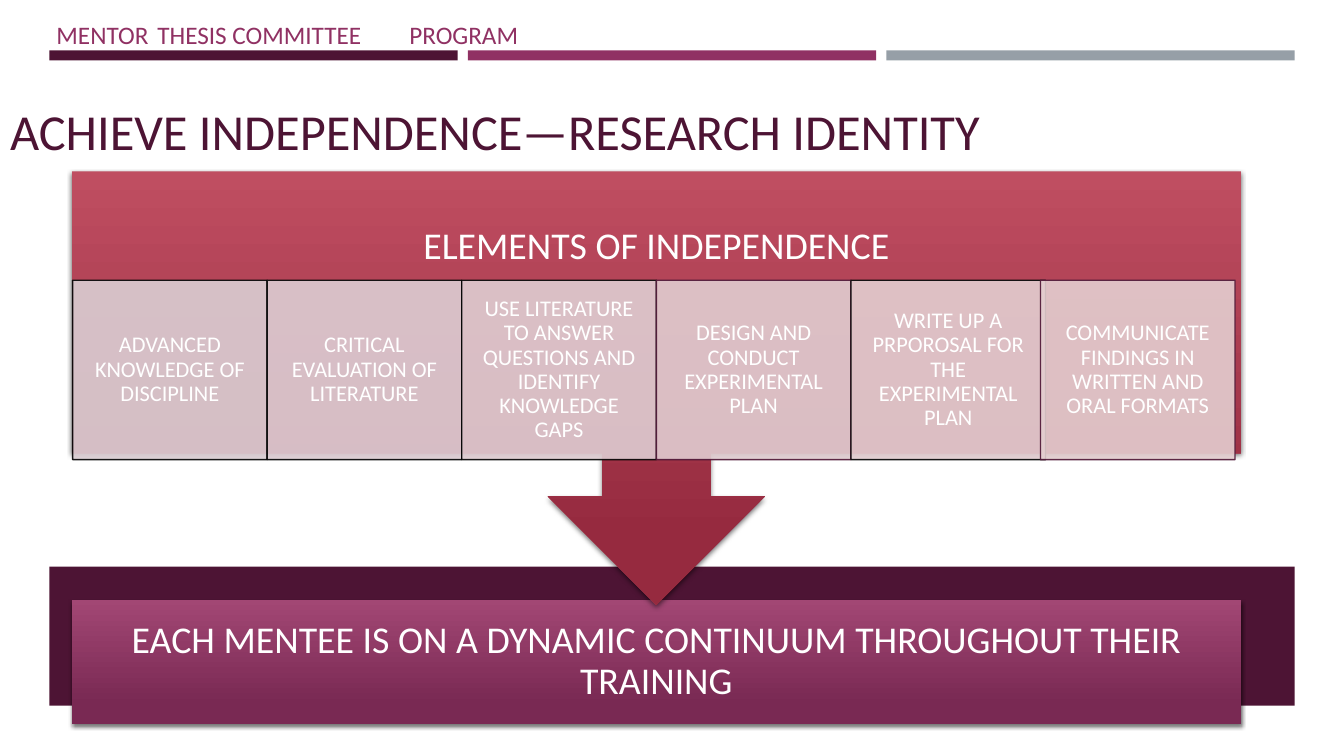
from lxml import etree
from pptx import Presentation
from pptx.dml.color import RGBColor
from pptx.enum.shapes import MSO_SHAPE
from pptx.enum.text import MSO_ANCHOR, MSO_AUTO_SIZE, PP_ALIGN
from pptx.oxml.ns import qn
from pptx.util import Pt

PX = 9144
RECT, CALLOUT = MSO_SHAPE.RECTANGLE, MSO_SHAPE.UP_ARROW_CALLOUT
MIDDLE, TOP = MSO_ANCHOR.MIDDLE, MSO_ANCHOR.TOP
CENTER, LEFT = PP_ALIGN.CENTER, PP_ALIGN.LEFT
NO_FIT = MSO_AUTO_SIZE.NONE
PLUM, MAGENTA, GREY = "4D1434", "903163", "969FA7"
WHITE, BLACK = "FFFFFF", "000000"
ELEMENTS = [
    ("ADVANCED KNOWLEDGE OF DISCIPLINE", "DBCED3", BLACK),
    ("CRITICAL EVALUATION OF LITERATURE", "DDCDD3", BLACK),
    ("USE LITERATURE TO ANSWER QUESTIONS AND IDENTIFY KNOWLEDGE GAPS", "DFCDD2", BLACK),
    ("DESIGN AND CONDUCT EXPERIMENTAL PLAN", "E1CDD1", PLUM),
    ("WRITE UP A PRPOROSAL FOR THE EXPERIMENTAL PLAN", "E3CED1", BLACK),
    ("COMMUNICATE FINDINGS IN WRITTEN AND ORAL FORMATS", "E4CED0", PLUM),
]


def emu(*px):
    """Turn px lengths into EMU."""
    return [int(v * PX) for v in px]


def rgb(hex_color):
    """Turn a hex string into a colour."""
    return RGBColor.from_string(hex_color)


def set_attrs(obj, formats):
    """Set each attribute of an object from a dict."""
    for name, value in formats.items():
        setattr(obj, name, value)


def set_alpha(fill_parent, percent):
    """Make the solid colours below an element partly opaque."""
    for clr in fill_parent.iter(qn("a:srgbClr")):
        etree.SubElement(clr, qn("a:alpha"), val=str(percent * 1000))


def write(sp, text, size, color, align=CENTER, anchor=MIDDLE, pad=(10, 5), spacing=1.0):
    """Put one formatted paragraph into a shape and return it."""
    tf = sp.text_frame
    dx, dy = emu(*pad)
    set_attrs(tf, {"word_wrap": True, "auto_size": NO_FIT, "vertical_anchor": anchor,
                   "margin_left": dx, "margin_right": dx,
                   "margin_top": dy, "margin_bottom": dy})
    p = tf.paragraphs[0]
    set_attrs(p, {"alignment": align, "line_spacing": spacing, "space_before": Pt(0)})
    r = p.add_run()
    r.text = text
    set_attrs(r.font, {"name": "Calibri", "size": Pt(size), "bold": False})
    r.font.color.rgb = rgb(color)
    return p


def add_block(s, box, fill, kind=RECT):
    """Add a plain filled shape without line or shadow."""
    sp = s.shapes.add_shape(kind, *emu(*box))
    sp.shadow.inherit = False
    sp.fill.solid()
    sp.fill.fore_color.rgb = rgb(fill)
    sp.line.fill.background()
    return sp


def add_glossy(s, box, light, dark, kind=RECT):
    """Add a shape with a vertical gradient and a soft shadow below."""
    sp = add_block(s, box, light, kind)
    sp.fill.gradient()
    sp.fill.gradient_angle = 270
    for stop, position, color in zip(sp.fill.gradient_stops, (0, 0.84), (light, dark)):
        stop.position = position
        stop.color.rgb = rgb(color)
    sp_pr = sp.element.spPr
    sp_pr.find(qn("a:gradFill")).set("rotWithShape", "0")
    shadow = etree.SubElement(sp_pr.find(qn("a:effectLst")), qn("a:outerShdw"),
                              blurRad=str(Pt(3)), dist=str(Pt(2)), dir="5400000",
                              rotWithShape="0")
    etree.SubElement(shadow, qn("a:srgbClr"), val=BLACK)
    set_alpha(shadow, 55)
    return sp


def add_frame(s, box):
    """Draw the three top bars and the bottom band."""
    x, y, w, h = box
    gap, bar_h, band_h = 10, 10, 138
    bar_w = (w - 2 * gap) / 3
    for i, color in enumerate((PLUM, MAGENTA, GREY)):
        add_block(s, (x + i * (bar_w + gap), y, bar_w, bar_h), color)
    add_block(s, (x, y + h - band_h, w, band_h), PLUM)


def add_headings(s, title_box, roles_box):
    """Fill the title and the tabbed line of roles."""
    title, roles = s.placeholders
    for sp, box in ((title, title_box), (roles, roles_box)):
        set_attrs(sp, dict(zip(("left", "top", "width", "height"), emu(*box))))
    write(title, "ACHIEVE INDEPENDENCE—RESEARCH IDENTITY", 36, PLUM, LEFT)
    p = write(roles, "MENTOR\tTHESIS COMMITTEE\tPROGRAM", 18, MAGENTA, LEFT, TOP)
    p_pr = p._p.get_or_add_pPr()
    p_pr.set("marL", "0")
    p_pr.set("indent", "0")
    etree.SubElement(p_pr, qn("a:buNone"))
    tabs = etree.SubElement(p_pr, qn("a:tabLst"))
    for pos in emu(356, 800):
        etree.SubElement(tabs, qn("a:tab"), pos=str(pos), algn="l")


def add_callout(s, box):
    """Draw the downward callout with its heading."""
    x, y, w, h = box
    sp = add_glossy(s, box, "BF4E61", "962A3F", CALLOUT)
    sp.rotation = 180
    heading = s.shapes.add_textbox(*emu(x, y, w, 151))
    write(heading, "ELEMENTS OF INDEPENDENCE", 27, WHITE, pad=(21, 21), spacing=0.9)


def add_elements(s, box):
    """Lay the element tiles in a row, the last one flush right."""
    x, y, w, h = box
    tile_w = 193
    for i, (text, fill, line) in enumerate(ELEMENTS):
        sp = add_block(s, (x + min(i * tile_w, w - tile_w), y, tile_w, h), fill)
        sp.line.color.rgb = rgb(line)
        sp.line.width = Pt(1)
        set_alpha(sp.element.spPr, 90)
        write(sp, text, 16, WHITE, pad=(12, 2), spacing=0.9)


def add_conclusion(s, box):
    """Draw the closing statement."""
    sp = add_glossy(s, box, "A24774", "792953")
    write(sp, "EACH MENTEE IS ON A DYNAMIC CONTINUUM THROUGHOUT THEIR TRAINING",
          27, WHITE, pad=(21, 21), spacing=0.9)


def main():
    """Build the slide and save it."""
    prs = Presentation()
    prs.slide_width, prs.slide_height = emu(1333, 750)
    s = prs.slides.add_slide(prs.slide_layouts[1])
    add_frame(s, (49, 50, 1235, 650))
    add_headings(s, (0, 47, 1206, 164), (46, 14, 1206, 66))
    add_conclusion(s, (71, 595, 1160, 123))
    add_callout(s, (71, 170, 1160, 430))
    add_elements(s, (72, 278, 1153, 178))
    prs.save("out.pptx")


if __name__ == "__main__":
    main()
